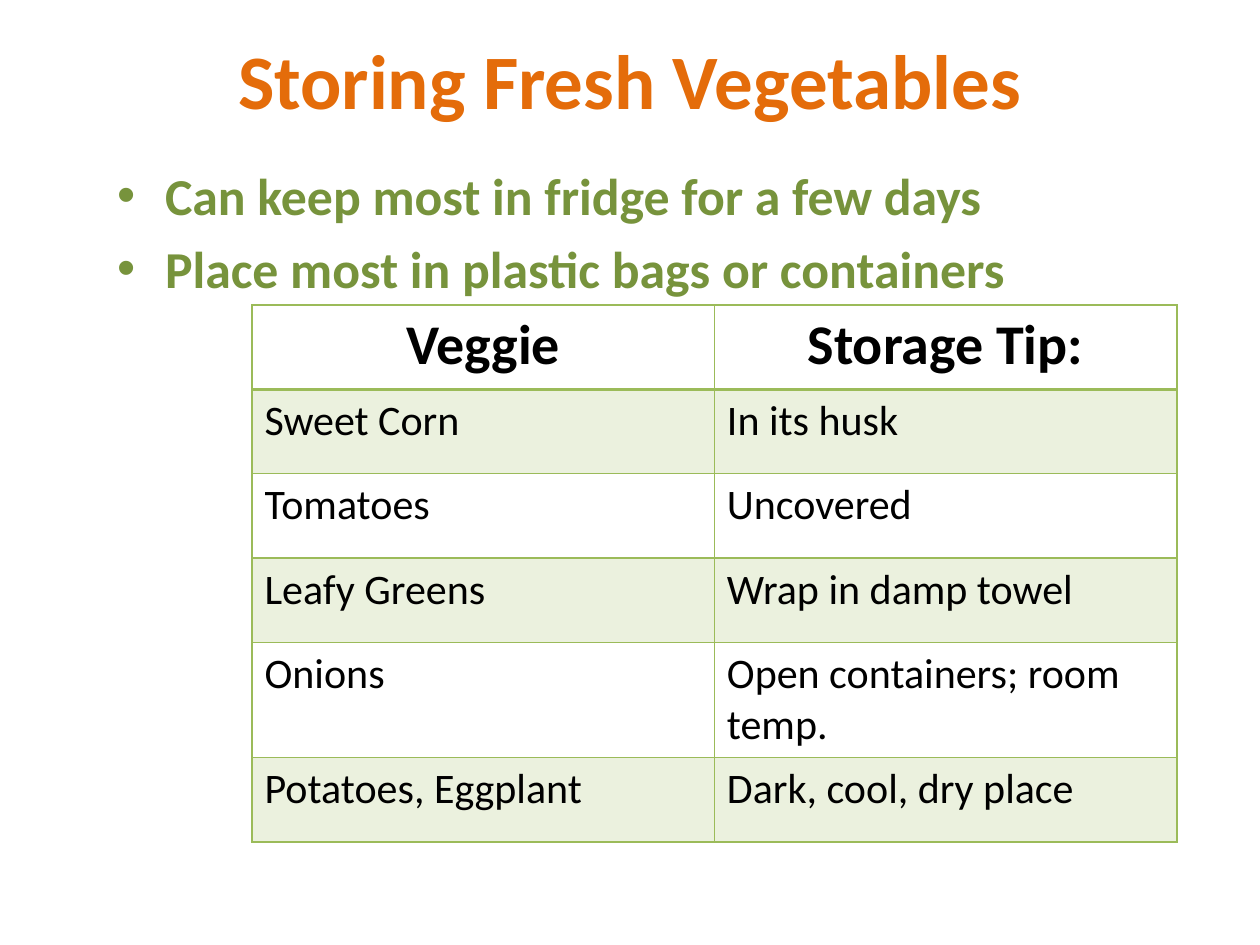
from lxml import etree
from pptx import Presentation, util as u
from pptx.dml.color import RGBColor
from pptx.enum import text
from pptx.oxml.ns import qn

TITLE = "Storing Fresh Vegetables"
BULLETS = [
    "Can keep most in fridge for a few days",
    "Place most in plastic bags or containers",
]
TIPS = [
    ("Veggie", "Storage Tip:"),
    ("Sweet Corn", "In its husk"),
    ("Tomatoes", "Uncovered"),
    ("Leafy Greens", "Wrap in damp towel"),
    ("Onions", "Open containers; room temp."),
    ("Potatoes, Eggplant", "Dark, cool, dry place"),
]
COLORS = {"title": "E46C0A", "bullet": "77933C", "text": "000000",
          "border": "9BBB59", "band": "EBF1DE"}
FONT = "Calibri"
COLUMN_WIDTH, ROW_HEIGHT = 3.67, 0.67


def place(shape, left, top, width, height):
    shape.left, shape.top = u.Inches(left), u.Inches(top)
    shape.width, shape.height = u.Inches(width), u.Inches(height)


def style(para, size, color, bold=False):
    for span in para.runs:
        span.font.name = FONT
        span.font.size = u.Pt(size)
        span.font.bold = bold
        span.font.color.rgb = RGBColor.from_string(COLORS[color])


def add_borders(cell, widths):
    """Draw cell borders; widths maps the sides L, R, T, B to points."""
    properties = cell._tc.get_or_add_tcPr()
    for side, width in widths.items():
        line = etree.SubElement(properties, qn(f"a:ln{side}"), w=str(u.Pt(width)))
        fill = etree.SubElement(line, qn("a:solidFill"))
        etree.SubElement(fill, qn("a:srgbClr"), val=COLORS["border"])


def add_title(slide):
    title = slide.shapes.title
    place(title, 0.5, 0, 9, 1.25)
    title.text_frame.text = TITLE
    title.text_frame.vertical_anchor = text.MSO_ANCHOR.MIDDLE
    para = title.text_frame.paragraphs[0]
    para.alignment = text.PP_ALIGN.CENTER
    style(para, 44, "title", bold=True)


def add_bullets(slide):
    body = slide.placeholders[1]
    place(body, 0.83, 1.25, 8.42, 1)
    frame = body.text_frame
    frame.auto_size = text.MSO_AUTO_SIZE.NONE
    frame.text = "\n".join(BULLETS)
    for index, para in enumerate(frame.paragraphs):
        properties = para._p.get_or_add_pPr()
        properties.set("marL", str(u.Inches(0.38)))
        properties.set("indent", str(-u.Inches(0.38)))
        etree.SubElement(properties, qn("a:buChar"), char="•")
        para.space_before = u.Pt(6 if index else 0)
        style(para, 29.6, "bullet", bold=True)


def add_tips(slide):
    rows, columns = len(TIPS), len(TIPS[0])
    table = slide.shapes.add_table(
        rows, columns, u.Inches(2), u.Inches(2.42),
        u.Inches(columns * COLUMN_WIDTH), u.Inches(rows * ROW_HEIGHT)).table
    table.first_row = table.horz_banding = False
    for row, values in enumerate(TIPS):
        header = row == 0
        for column, value in enumerate(values):
            cell = table.cell(row, column)
            add_borders(cell, {"L": 1, "R": 1, "T": 2 if row == 1 else 1,
                               "B": 2 if header else 1})
            if row % 2:
                cell.fill.solid()
                cell.fill.fore_color.rgb = RGBColor.from_string(COLORS["band"])
            else:
                cell.fill.background()
            cell.text_frame.text = value
            para = cell.text_frame.paragraphs[0]
            if header:
                para.alignment = text.PP_ALIGN.CENTER
            style(para, 32 if header else 24, "text", bold=header)


def main():
    deck = Presentation()
    deck.slide_width, deck.slide_height = u.Inches(10), u.Inches(7.5)
    page = deck.slides.add_slide(deck.slide_layouts.get_by_name("Title and Content"))
    add_title(page)
    add_bullets(page)
    add_tips(page)
    deck.save("out.pptx")


if __name__ == "__main__":
    main()
